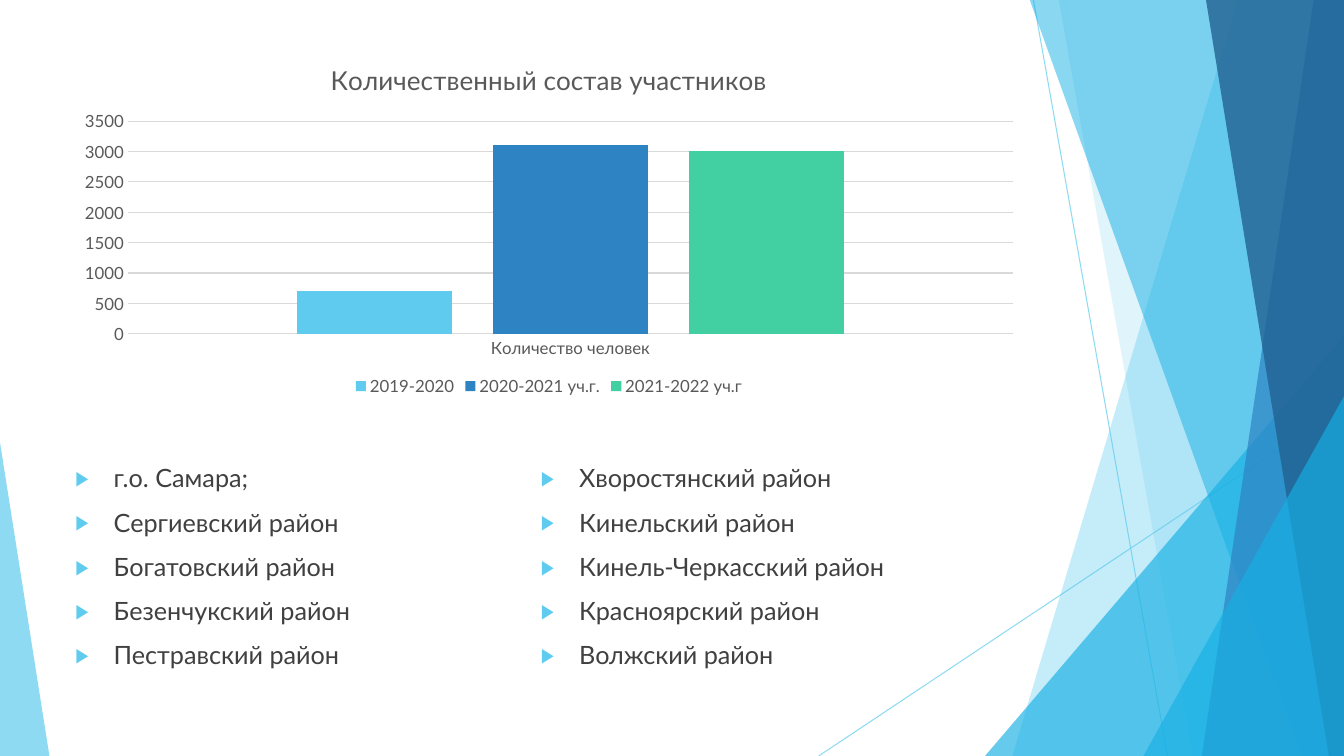
from lxml import etree
from pptx import Presentation
from pptx.chart.data import CategoryChartData
from pptx.dml.color import RGBColor
from pptx.enum.chart import XL_CHART_TYPE, XL_LEGEND_POSITION, XL_TICK_MARK
from pptx.enum.shapes import MSO_CONNECTOR, MSO_SHAPE
from pptx.enum.text import MSO_ANCHOR
from pptx.oxml.ns import qn
from pptx.util import Inches, Pt

COLUMN_CHART = XL_CHART_TYPE.COLUMN_CLUSTERED
LEGEND_BOTTOM = XL_LEGEND_POSITION.BOTTOM
NO_TICK = XL_TICK_MARK.NONE
STRAIGHT = MSO_CONNECTOR.STRAIGHT
TRIANGLE = MSO_SHAPE.ISOSCELES_TRIANGLE
TOP = MSO_ANCHOR.TOP

FONT = "Lato"
WIDTH, HEIGHT = 13.33, 7.5
SKY, CYAN, BLUE, NAVY, GREEN = "5FCBEF", "17B0E4", "2E83C3", "226292", "42D0A2"
CHART_TEXT, GRID, BODY_TEXT = "595959", "D9D9D9", "404040"

# Start and end points
LINES = [((10.25, 0), (11.58, HEIGHT)), ((WIDTH, 4.03), (8.12, HEIGHT))]

# Left edge at the top, left edge at the bottom, colour, opacity
BACK_BANDS = [(12.28, 10.04, SKY, 36), (10.5, 11.83, SKY, 20)]
FRONT_BANDS = [
    (10.21, 12.91, CYAN, 50),
    (13.03, 11.92, BLUE, 70),
    (11.96, 13.18, NAVY, 80),
]

CATEGORY = "Количество человек"
SERIES = [
    ("2019-2020", 700, SKY),
    ("2020-2021 уч.г.", 3100, BLUE),
    ("2021-2022 уч.г", 3000, GREEN),
]
DISTRICTS = [
    "г.о. Самара;",
    "Сергиевский район",
    "Богатовский район",
    "Безенчукский район",
    "Пестравский район",
    "Хворостянский район",
    "Кинельский район",
    "Кинель-Черкасский район",
    "Красноярский район",
    "Волжский район",
]


def rgb(color):
    return RGBColor.from_string(color)


def set_font(font, size, color):
    font.name, font.size, font.bold = FONT, Pt(size), False
    font.color.rgb = rgb(color)


def set_opacity(shape, percent):
    for color in shape.element.spPr.iter(qn("a:srgbClr")):
        etree.SubElement(color, qn("a:alpha"), val=str(percent * 1000))


def fill_shape(shape, color, opacity):
    shape.shadow.inherit = False
    shape.line.fill.background()
    shape.fill.solid()
    shape.fill.fore_color.rgb = rgb(color)
    set_opacity(shape, opacity)


def add_line(slide, start, end):
    points = [Inches(value) for value in (*start, *end)]
    line = slide.shapes.add_connector(STRAIGHT, *points)
    line.line.color.rgb = rgb(SKY)
    line.line.width = Pt(0.75)
    set_opacity(line, 70)
    etree.SubElement(line.element.spPr, qn("a:effectLst"))


def add_band(slide, top_left, bottom_left, color, opacity):
    corners = [(top_left, -0.01), (WIDTH, -0.01), (WIDTH, HEIGHT), (bottom_left, HEIGHT)]
    points = [(Inches(x), Inches(y)) for x, y in corners]
    builder = slide.shapes.build_freeform(*points[0], scale=1.0)
    builder.add_line_segments(points[1:], close=True)
    fill_shape(builder.convert_to_shape(), color, opacity)


def add_triangle(slide, left, top, width, apex, color, opacity):
    """Add a right triangle that stands on the bottom edge of the slide."""
    shape = slide.shapes.add_shape(
        TRIANGLE, Inches(left), Inches(top), Inches(width), Inches(HEIGHT - top)
    )
    shape.adjustments[0] = apex
    fill_shape(shape, color, opacity)


def add_participant_chart(slide):
    data = CategoryChartData()
    data.categories = [CATEGORY]
    for name, value, _ in SERIES:
        data.add_series(name, [value])
    chart = slide.shapes.add_chart(
        COLUMN_CHART, Inches(0.65), Inches(0.44), Inches(9.59), Inches(3.53), data
    ).chart
    set_font(chart.font, 12, CHART_TEXT)

    # Title and legend
    title = chart.chart_title.text_frame
    title.text = "Количественный состав участников"
    set_font(title.paragraphs[0].font, 18.6, CHART_TEXT)
    chart.has_legend = True
    chart.legend.position = LEGEND_BOTTOM
    chart.legend.include_in_layout = False

    # Axes
    for axis in (chart.category_axis, chart.value_axis):
        axis.major_tick_mark = axis.minor_tick_mark = NO_TICK
    value_axis = chart.value_axis
    value_axis.minimum_scale, value_axis.maximum_scale = 0, 3500
    value_axis.major_unit = 500
    value_axis.format.line.fill.background()
    for line in (chart.category_axis.format.line, value_axis.major_gridlines.format.line):
        line.color.rgb = rgb(GRID)
        line.width = Pt(0.75)

    # Columns
    plot = chart.plots[0]
    plot.gap_width, plot.overlap = 219, -27
    plot.vary_by_categories = False
    for series, (_, _, color) in zip(plot.series, SERIES):
        series.format.fill.solid()
        series.format.fill.fore_color.rgb = rgb(color)


def add_bullet(paragraph):
    properties = paragraph._p.get_or_add_pPr()
    indent = Inches(0.38)
    properties.set("marL", str(indent))
    properties.set("indent", str(-indent))
    color = etree.SubElement(properties, qn("a:buClr"))
    etree.SubElement(color, qn("a:srgbClr"), val=SKY)
    etree.SubElement(properties, qn("a:buSzPct"), val="80000")
    etree.SubElement(properties, qn("a:buFont"), typeface=FONT)
    etree.SubElement(properties, qn("a:buChar"), char="▶")


def add_district_list(slide):
    box = slide.shapes.add_textbox(Inches(0.65), Inches(4.54), Inches(9.43), Inches(2.49))
    frame = box.text_frame
    frame.word_wrap = True
    frame.vertical_anchor = TOP
    frame.text = "\n".join(DISTRICTS)
    body = box.element.txBody.find(qn("a:bodyPr"))
    body.set("numCol", "2")
    for paragraph in frame.paragraphs:
        paragraph.space_before = Pt(10)
        add_bullet(paragraph)
        set_font(paragraph.font, 18, BODY_TEXT)


def main():
    presentation = Presentation()
    presentation.slide_width = Inches(WIDTH)
    presentation.slide_height = Inches(HEIGHT)
    slide = presentation.slides.add_slide(presentation.slide_layouts[6])

    # Decoration, from back to front
    for start, end in LINES:
        add_line(slide, start, end)
    for band in BACK_BANDS:
        add_band(slide, *band)
    add_triangle(slide, 9.77, 3.33, 3.56, 1, CYAN, 66)
    for band in FRONT_BANDS:
        add_band(slide, *band)
    add_triangle(slide, 11.34, 3.93, 1.99, 1, CYAN, 66)
    add_triangle(slide, 0, 4.39, 0.49, 0, SKY, 70)

    # Content
    add_participant_chart(slide)
    add_district_list(slide)
    presentation.save("out.pptx")


if __name__ == "__main__":
    main()
